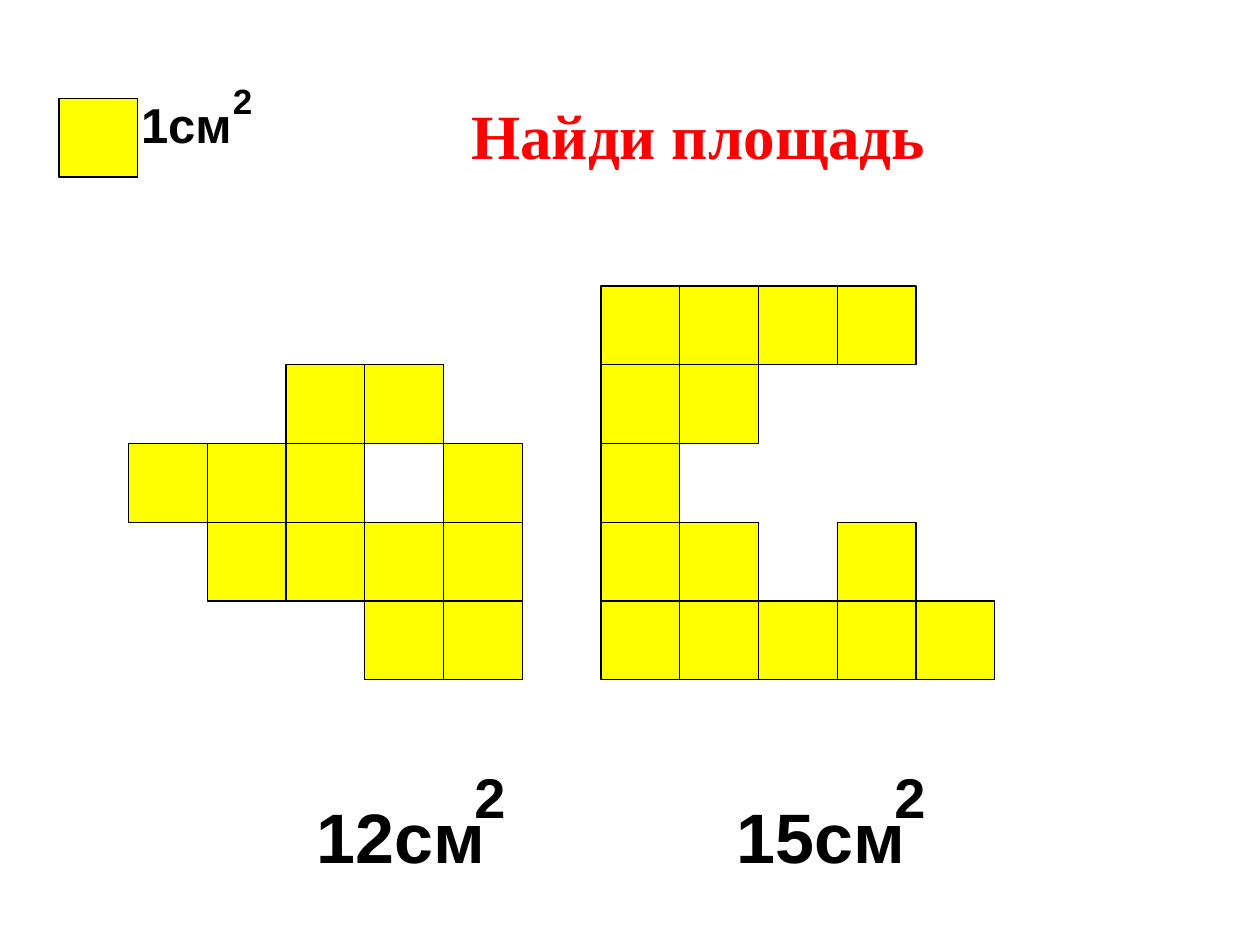
from pptx import Presentation
from pptx.dml.color import RGBColor
from pptx.enum.shapes import MSO_SHAPE as Shape
from pptx.enum.text import MSO_AUTO_SIZE as Fit, PP_ALIGN as Align
from pptx.util import Pt

CELL = 45
LEFT, TOP = 73.5, 163.5
# Both figures share one grid; each mark is one unit square
ROWS = [
    "......####.",
    "..##..##...",
    "###.#.#....",
    ".####.##.#.",
    "...##.#####",
]


def color(code):
    return RGBColor.from_string(code)


class Page:
    font = "Arial"
    ink = "000000"
    fill = "FFFF00"

    def __init__(self, slide):
        self.slide = slide

    def square(self, x, y):
        box = self.slide.shapes.add_shape(
            Shape.RECTANGLE, Pt(x), Pt(y), Pt(CELL), Pt(CELL))
        box.shadow.inherit = False
        box.fill.solid()
        box.fill.fore_color.rgb = color(self.fill)
        box.line.color.rgb = color(self.ink)
        box.line.width = Pt(0.75)

    def text(self, words, x, y, w, h, size, ink=None, font=None,
             align=Align.LEFT, fit=Fit.SHAPE_TO_FIT_TEXT, pad=3.6):
        box = self.slide.shapes.add_textbox(Pt(x), Pt(y), Pt(w), Pt(h))
        frame = box.text_frame
        look = {"word_wrap": False, "auto_size": fit, "margin_top": Pt(pad)}
        for key, val in look.items():
            setattr(frame, key, val)
        para = frame.paragraphs[0]
        para.alignment = align
        run = para.add_run()
        run.text = words
        style = {"name": font or self.font, "size": Pt(size), "bold": True}
        for key, val in style.items():
            setattr(run.font, key, val)
        run.font.color.rgb = color(ink or self.ink)

    def area(self, words, x, y):
        self.text("2", x + 90, y - 18, 32.4, 46, 32)
        self.text(words, x, y, 111.6, 56, 40)


def main():
    deck = Presentation()
    deck.slide_width, deck.slide_height = Pt(720), Pt(540)
    page = Page(deck.slides.add_slide(deck.slide_layouts[6]))

    # Figures
    for row, marks in enumerate(ROWS):
        for col, mark in enumerate(marks):
            if mark == "#":
                page.square(LEFT + col * CELL, TOP + row * CELL)

    # Unit square and its label
    page.square(33.75, 56.25)
    page.text("2", 126, 42, 25.2, 31.5, 20)
    page.text("1см", 73.5, 50.5, 66.2, 41, 28)

    # Answers
    page.area("12см", 174, 450)
    page.area("15см", 414, 450)

    # Title
    page.text("Найди площадь", 156, 48, 486, 72, 36, "FF0000",
              "Times New Roman", Align.CENTER, Fit.NONE, 7.2)

    deck.save("out.pptx")


if __name__ == "__main__":
    main()
